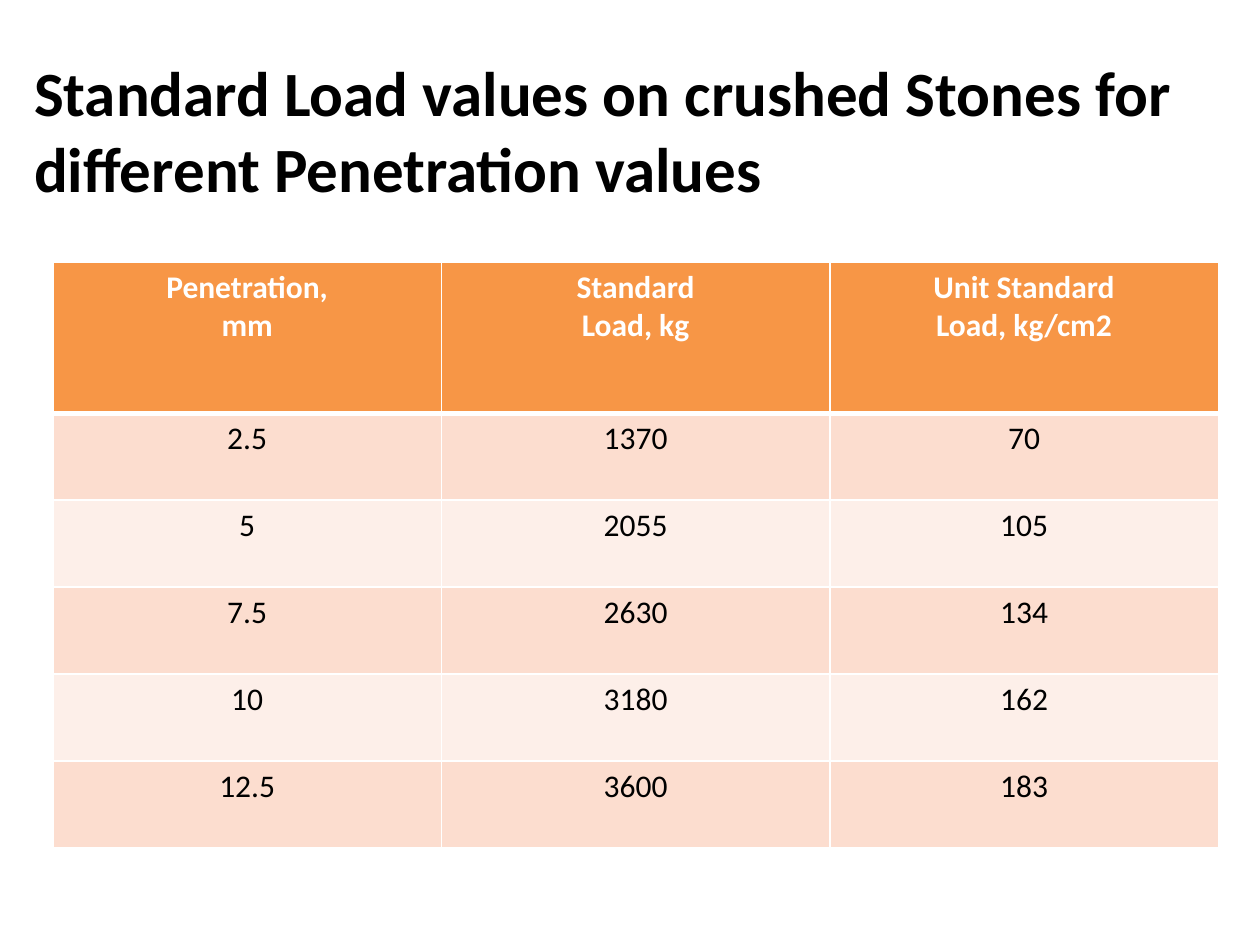
from lxml import etree
from pptx import Presentation
from pptx.dml.color import RGBColor
from pptx.enum.text import MSO_ANCHOR, MSO_AUTO_SIZE, PP_ALIGN
from pptx.oxml.ns import qn
from pptx.util import Inches, Pt

LEFT, CENTER = PP_ALIGN.LEFT, PP_ALIGN.CENTER
MIDDLE, NO_FIT = MSO_ANCHOR.MIDDLE, MSO_AUTO_SIZE.NONE

# Content
TITLE = "Standard Load values on crushed Stones for different Penetration values"
HEADINGS = ("Penetration,\nmm", "Standard\nLoad, kg", "Unit Standard\nLoad, kg/cm2")
LOADS = [
    ("2.5", "1370", "70"),
    ("5", "2055", "105"),
    ("7.5", "2630", "134"),
    ("10", "3180", "162"),
    ("12.5", "3600", "183"),
]

# Formats
BLACK, WHITE, ORANGE = "000000", "FFFFFF", "F79646"
BANDS = ("FCDDCF", "FDEFE9")
TITLE_FONT = {"name": "Calibri", "size": Pt(36), "bold": True}
HEADING_FONT = {"name": "Calibri", "size": Pt(18), "bold": True}
LOAD_FONT = {"name": "Calibri", "size": Pt(18), "bold": False}
HEADING_HEIGHT, LOAD_HEIGHT = 1.2, 0.69
TABLE_WIDTH = 9.25


def rgb(value):
    return RGBColor.from_string(value)


def format_text(frame, font_format, color, align):
    for paragraph in frame.paragraphs:
        paragraph.alignment = align
        for run in paragraph.runs:
            for name, value in font_format.items():
                setattr(run.font, name, value)
            run.font.color.rgb = rgb(color)


def add_borders(cell, widths):
    properties = cell._tc.get_or_add_tcPr()
    for side, width in widths.items():
        line = etree.SubElement(properties, qn(f"a:ln{side}"), w=str(Pt(width)))
        fill = etree.SubElement(line, qn("a:solidFill"))
        etree.SubElement(fill, qn("a:srgbClr"), val=WHITE)


prs = Presentation()
prs.slide_width, prs.slide_height = Inches(10), Inches(7.5)
slide = prs.slides.add_slide(prs.slide_layouts[5])

# Title
title = slide.shapes.title
title.left, title.top = Inches(0.17), Inches(0.3)
title.width, title.height = Inches(9.58), Inches(1.45)
title.text_frame.text = TITLE
title.text_frame.auto_size = NO_FIT
title.text_frame.vertical_anchor = MIDDLE
format_text(title.text_frame, TITLE_FONT, BLACK, LEFT)

# Table of loads
rows = [HEADINGS, *LOADS]
heights = [HEADING_HEIGHT] + [LOAD_HEIGHT] * len(LOADS)
table = slide.shapes.add_table(
    len(rows), len(HEADINGS), Inches(0.42), Inches(2.08),
    Inches(TABLE_WIDTH), Inches(sum(heights))).table
for column in table.columns:
    column.width = Inches(TABLE_WIDTH / len(HEADINGS))

for r, (values, height) in enumerate(zip(rows, heights)):
    table.rows[r].height = Inches(height)
    heading = r == 0
    font_format, color, fill = (
        (HEADING_FONT, WHITE, ORANGE) if heading
        else (LOAD_FONT, BLACK, BANDS[(r - 1) % 2]))
    borders = {"L": 1, "R": 1, "T": 3 if r == 1 else 1, "B": 3 if heading else 1}
    for c, value in enumerate(values):
        cell = table.cell(r, c)
        cell.text_frame.text = value
        format_text(cell.text_frame, font_format, color, CENTER)
        add_borders(cell, borders)
        cell.fill.solid()
        cell.fill.fore_color.rgb = rgb(fill)

prs.save("out.pptx")
